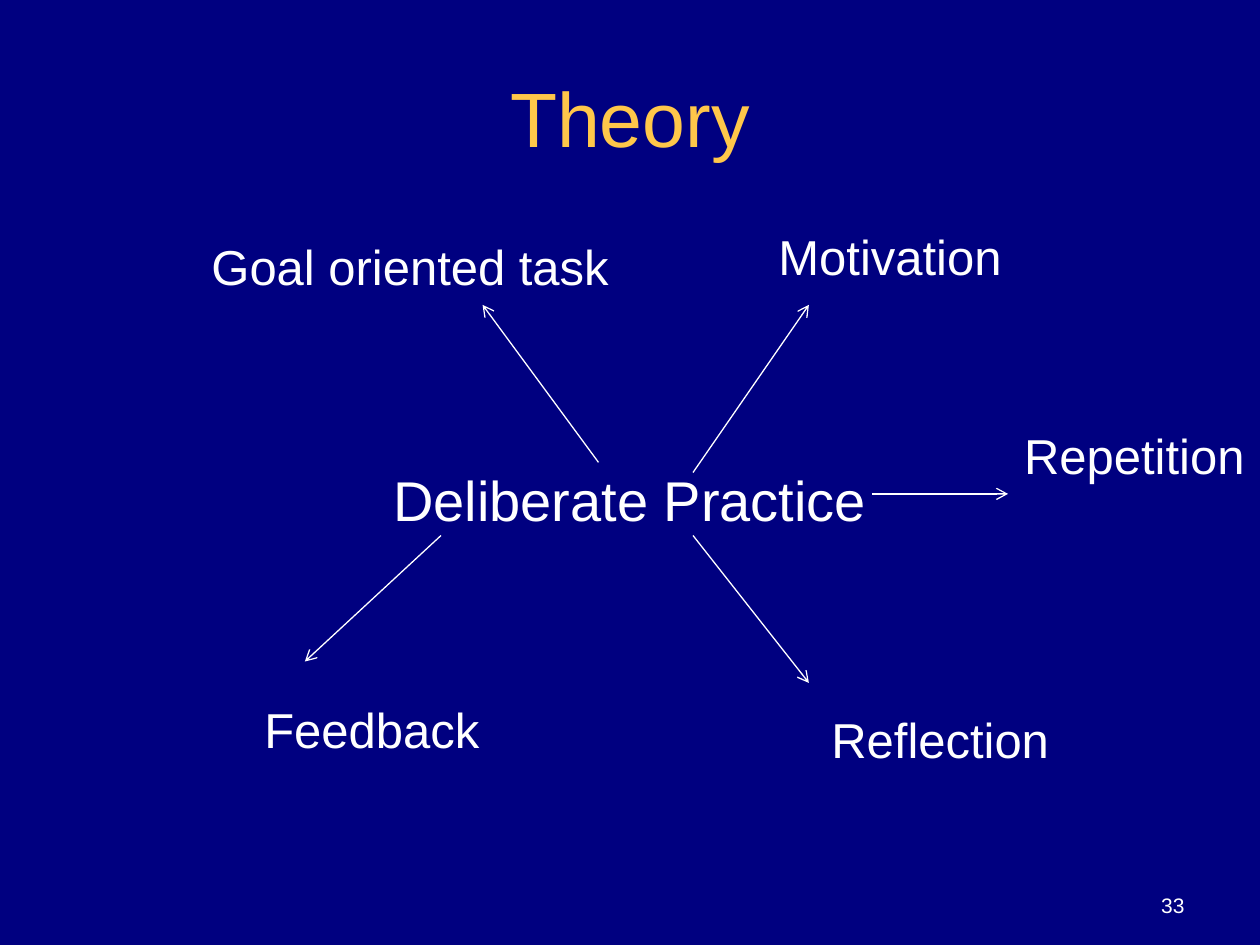
from lxml import etree
from pptx import Presentation
from pptx import util as u
from pptx.dml.color import RGBColor
from pptx.enum import shapes, text
from pptx.oxml.ns import qn

COLORS = {"navy": "000080", "gold": "FFC74A", "white": "FFFFFF"}
FONT = "Arial"


def set_text(sp, words, size, color="white", align=text.PP_ALIGN.LEFT,
             anchor=text.MSO_ANCHOR.TOP, wrap=True):
    tf = sp.text_frame
    tf.word_wrap = wrap
    tf.vertical_anchor = anchor
    p = tf.paragraphs[0]
    p.text = words
    p.alignment = align
    p.font.name = FONT
    p.font.size = u.Pt(size)
    p.font.color.rgb = RGBColor.from_string(COLORS[color])


prs = Presentation()
prs.slide_width, prs.slide_height = u.Inches(10), u.Inches(7.5)
s = prs.slides.add_slide(prs.slide_layouts[5])
s.background.fill.solid()
s.background.fill.fore_color.rgb = RGBColor.from_string(COLORS["navy"])

title = s.shapes.title
title.left, title.top = u.Inches(0.5), u.Inches(0.3)
title.width, title.height = u.Inches(9), u.Inches(1.25)
set_text(title, "Theory", 44, "gold", text.PP_ALIGN.CENTER, text.MSO_ANCHOR.MIDDLE)

center = s.shapes.add_textbox(u.Inches(0.5), u.Inches(3.65), u.Inches(9), u.Inches(0.62))
set_text(center, "Deliberate Practice", 32, align=text.PP_ALIGN.CENTER,
         anchor=text.MSO_ANCHOR.MIDDLE)

number = s.shapes.add_textbox(u.Inches(7.17), u.Inches(6.83), u.Inches(2.33), u.Inches(0.5))
set_text(number, "33", 12, align=text.PP_ALIGN.RIGHT, anchor=text.MSO_ANCHOR.BOTTOM)

factors = [
    ("Goal oriented task", 1.58, 1.83, 3.39),
    ("Motivation", 6.08, 1.75, 1.99),
    ("Repetition", 8.03, 3.33, 1.97),
    ("Reflection", 6.5, 5.58, 1.95),
    ("Feedback", 2, 5.5, 1.93),
]
for words, left, top, width in factors:
    sp = s.shapes.add_textbox(u.Inches(left), u.Inches(top), u.Inches(width), u.Inches(0.57))
    set_text(sp, words, 28, wrap=False)
    sp.text_frame.auto_size = text.MSO_AUTO_SIZE.SHAPE_TO_FIT_TEXT

arrows = [
    (4.75, 3.67, 3.83, 2.42),
    (5.5, 3.75, 6.42, 2.42),
    (6.92, 3.92, 8, 3.92),
    (5.5, 4.25, 6.42, 5.42),
    (3.5, 4.25, 2.42, 5.25),
]
for ends in arrows:
    sp = s.shapes.add_connector(shapes.MSO_CONNECTOR.STRAIGHT, *[u.Inches(v) for v in ends])
    sp.line.color.rgb = RGBColor.from_string(COLORS["white"])
    sp.line.width = u.Pt(0.75)
    etree.SubElement(sp.line._get_or_add_ln(), qn("a:tailEnd"), type="arrow")
    etree.SubElement(sp._element.spPr, qn("a:effectLst"))

prs.save("out.pptx")
